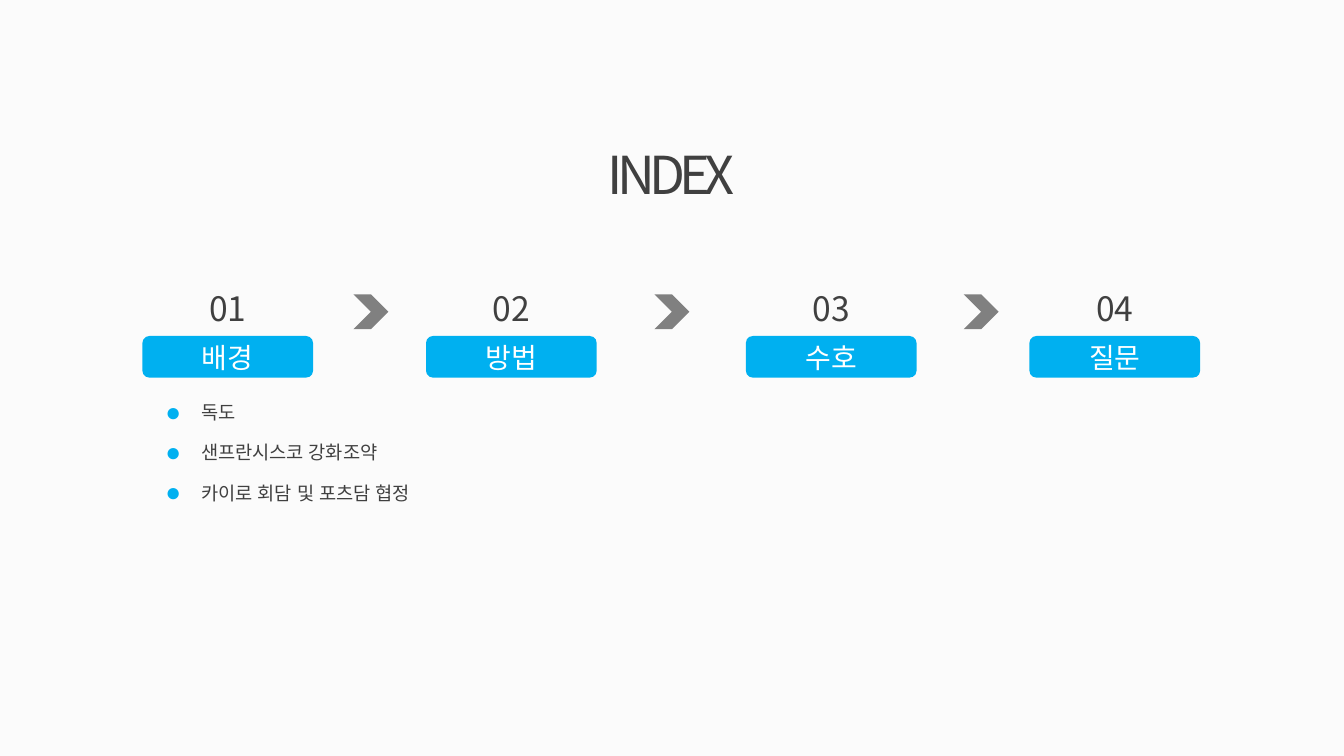
from dataclasses import dataclass

from lxml import etree
from pptx import Presentation
from pptx import util as u
from pptx.dml.color import RGBColor
from pptx.enum import shapes, text
from pptx.oxml import ns


@dataclass(frozen=True)
class Theme:
    background: str = "FBFBFB"
    ink: str = "404040"
    accent: str = "00B0F0"
    arrow: str = "808080"
    label_ink: str = "FFFFFF"
    font: str = "Noto Sans CJK KR"
    list_font: str = "Arial"
    title_size: int = 28
    number_size: int = 18
    label_size: int = 15
    list_size: int = 10


theme = Theme()
Inches = u.Inches


def write(frame, content, *, size, color=theme.ink, font=theme.font,
          align=text.PP_ALIGN.CENTER, anchor=text.MSO_ANCHOR.MIDDLE, spacing=0):
    frame.word_wrap = True
    frame.auto_size = text.MSO_AUTO_SIZE.NONE
    frame.vertical_anchor = anchor
    frame.margin_left = frame.margin_right = 0
    frame.margin_top = frame.margin_bottom = 0
    frame.text = content
    for paragraph in frame.paragraphs:
        paragraph.alignment = align
        run = paragraph.runs[0]
        run.font.size = u.Pt(size)
        run.font.name = font
        run.font.color.rgb = RGBColor.from_string(color)
        props = run.font._element
        etree.SubElement(props, ns.qn("a:ea"), typeface=font)
        if spacing:
            props.set("spc", str(spacing * 100))


def add_block(preset, left, top, width, height, color):
    block = slide.shapes.add_shape(
        preset, Inches(left), Inches(top), Inches(width), Inches(height))
    block.shadow.inherit = False
    block.fill.solid()
    block.fill.fore_color.rgb = RGBColor.from_string(color)
    block.line.fill.background()
    return block


prs = Presentation()
prs.slide_width = Inches(10)
prs.slide_height = Inches(10) * 9 // 16
slide = prs.slides.add_slide(prs.slide_layouts[1])
slide.background.fill.solid()
slide.background.fill.fore_color.rgb = RGBColor.from_string(theme.background)

index_title = slide.shapes.title
index_title.left, index_title.top = Inches(4.21), Inches(1.01)
index_title.width, index_title.height = Inches(1.57), Inches(0.56)
write(index_title.text_frame, "INDEX", size=theme.title_size, spacing=-3)

step_width = 1.27
steps = [(1.06, "배경"), (3.17, "방법"), (5.55, "수호"), (7.66, "질문")]
for position, (left, topic) in enumerate(steps, start=1):
    number = slide.shapes.add_textbox(
        Inches(left), Inches(2.09), Inches(step_width), Inches(0.4))
    write(number.text_frame, f"{position:02}", size=theme.number_size)
    label = add_block(shapes.MSO_SHAPE.ROUNDED_RECTANGLE,
                      left, 2.5, step_width, 0.31, theme.accent)
    write(label.text_frame, topic, size=theme.label_size, color=theme.label_ink)

for left in (2.63, 4.87, 7.17):
    add_block(shapes.MSO_SHAPE.CHEVRON, left, 2.19, 0.26, 0.26, theme.arrow)

background_topics = slide.placeholders[1]
background_topics.left, background_topics.top = Inches(1.23), Inches(2.85)
background_topics.width, background_topics.height = Inches(2.2), Inches(0.95)
write(background_topics.text_frame,
      "독도\n샌프란시스코 강화조약\n카이로 회담 및 포츠담 협정",
      size=theme.list_size, font=theme.list_font,
      align=text.PP_ALIGN.LEFT, anchor=text.MSO_ANCHOR.TOP)
for topic in background_topics.text_frame.paragraphs:
    topic.line_spacing = Inches(0.3)
    topic.space_before = topic.space_after = u.Pt(0)
    props = topic._p.get_or_add_pPr()
    props.set("marL", str(Inches(0.27)))
    props.set("indent", str(-Inches(0.27)))
    bullet_color = etree.SubElement(props, ns.qn("a:buClr"))
    etree.SubElement(bullet_color, ns.qn("a:srgbClr"), val=theme.accent)
    etree.SubElement(props, ns.qn("a:buSzPct"), val="140000")
    etree.SubElement(props, ns.qn("a:buFont"), typeface=theme.list_font)
    etree.SubElement(props, ns.qn("a:buChar"), char="●")

prs.save("out.pptx")
